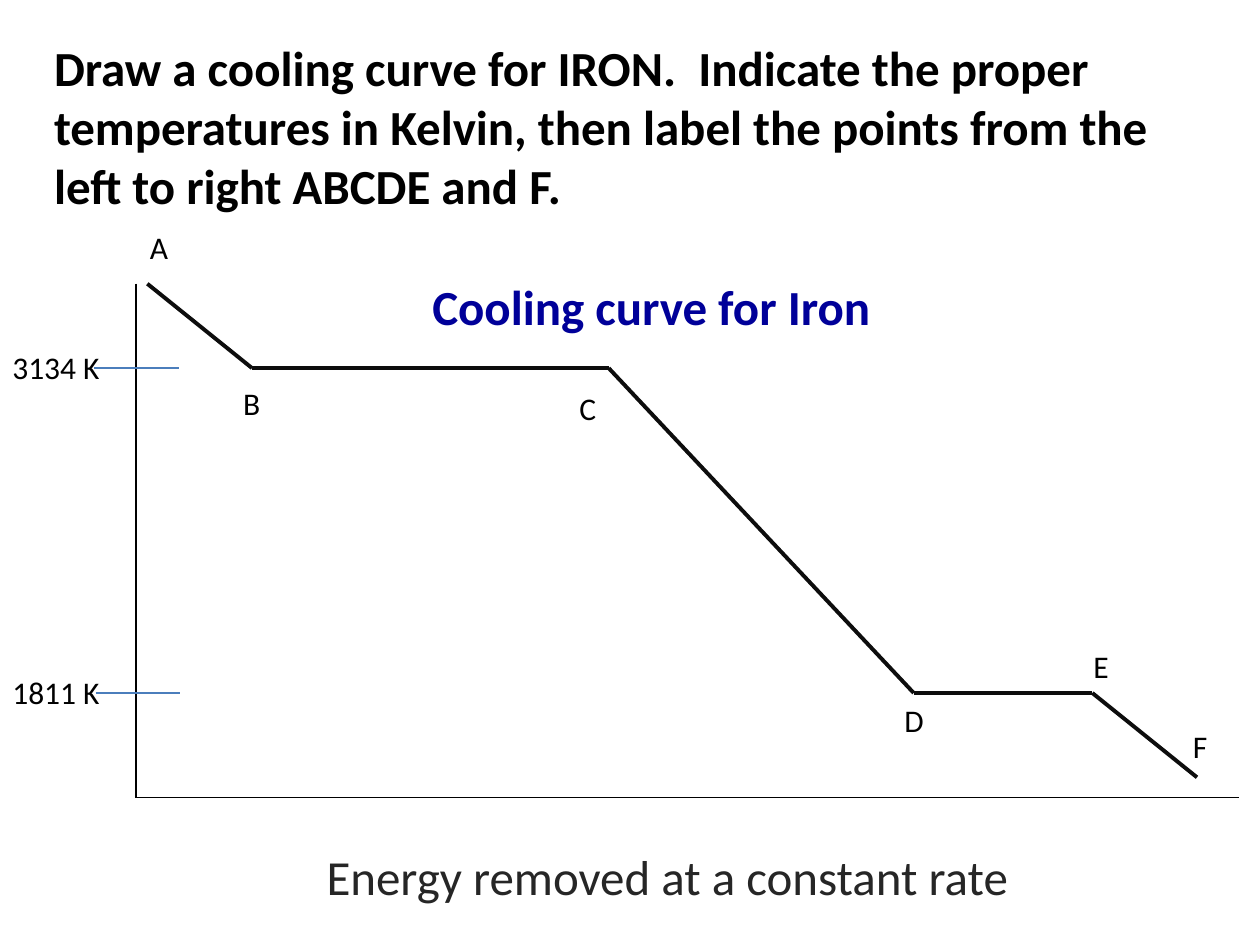
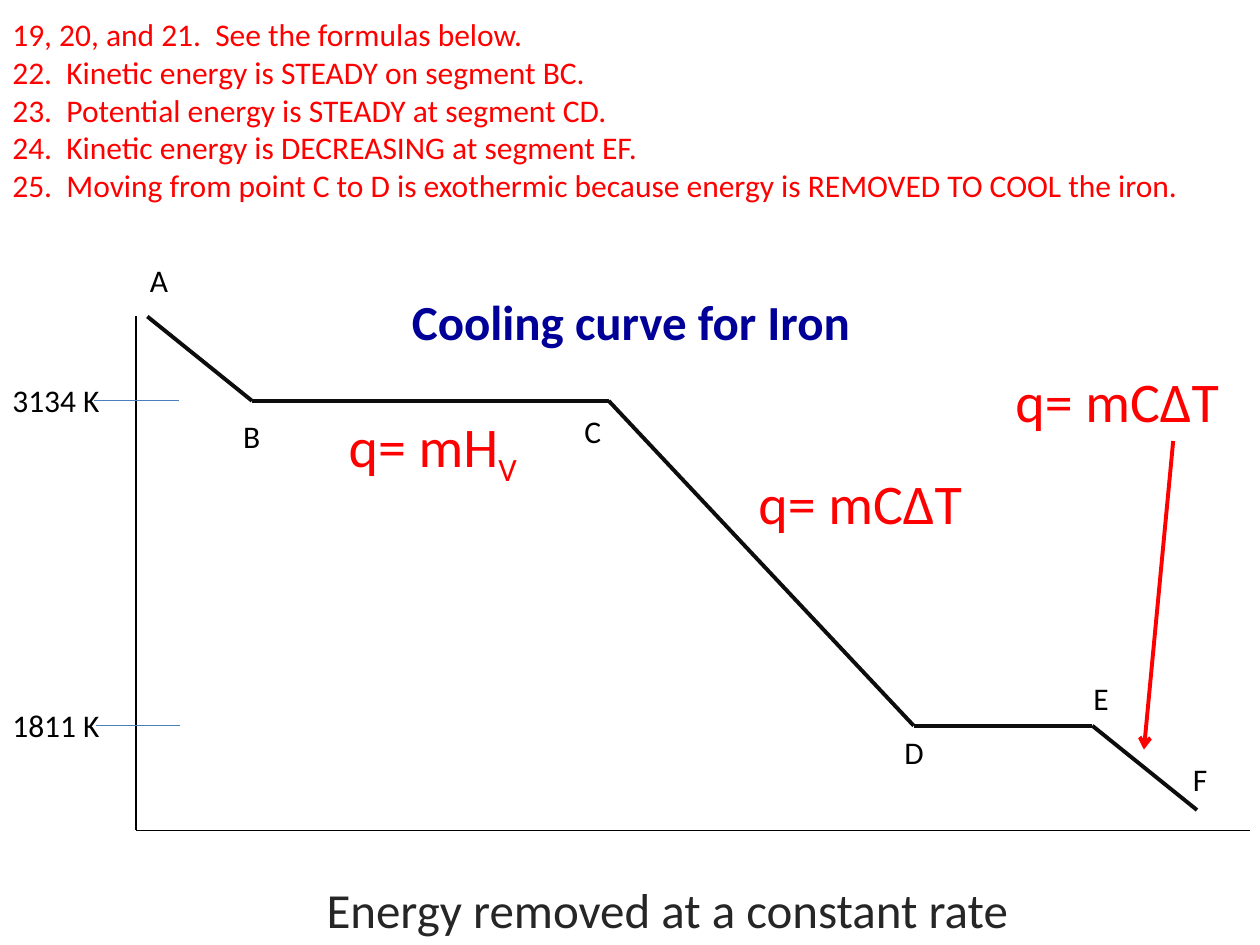
from itertools import pairwise
from lxml import etree
from pptx import Presentation
from pptx.dml.color import RGBColor
from pptx.enum import shapes, text
from pptx.oxml import ns
from pptx.util import Cm, Pt

COLORS = {
    "ink": "000000",
    "curve": "0D0D0D",
    "caption": "262626",
    "tick": "4B7EBC",
    "title": "000099",
    "answer": "FF0000",
}
FONT = "Calibri"
SMALL, LARGE, FORMULA = 18, 28, 32
THIN, THICK = 0.75, 2.25

TITLE = "Cooling curve for Iron"
CAPTION = "Energy removed at a constant rate"
QUESTION = (
    "Draw a cooling curve for IRON.  Indicate the proper temperatures in Kelvin, "
    "then label the points from the left to right ABCDE and F."
)
ANSWERS = [
    "19, 20, and 21.  See the formulas below.",
    "22.  Kinetic energy is STEADY on segment BC.",
    "23.  Potential energy is STEADY at segment CD.",
    "24.  Kinetic energy is DECREASING at segment EF.",
    "25.  Moving from point C to D is exothermic because energy is REMOVED TO COOL the iron.",
]
FORMULAS = [
    (6.78, 8.18, "q= mH", "V"),
    (15.04, 9.32, "q= mCΔT", ""),
    (20.22, 7.26, "q= mCΔT", ""),
]
FORMULA_ARROW = ((23.65, 8.89), (23.06, 15.11))

TOP, BOIL, FREEZE, END, BASE = 5.72, 7.42, 13.97, 15.67, 16.08
AXIS_X = 2.74
CURVE = {
    "A": (2.97, TOP),
    "B": (5.08, BOIL),
    "C": (12.27, BOIL),
    "D": (18.42, FREEZE),
    "E": (22.02, FREEZE),
    "F": (24.13, END),
}
POINT_LABELS = {
    "A": (2.77, 4.48),
    "B": (4.65, 7.62),
    "C": (11.43, 7.72),
    "D": (17.98, 14),
    "E": (21.79, 12.91),
    "F": (23.8, 14.53),
}
TEMPERATURES = [("3134 K", BOIL, 1.9), ("1811 K", FREEZE, 1.93)]
TICK_LENGTH = 1.7
LABEL_RISE = 0.53

SLIDES = [
    {"shift": 0, "axis_end": 24.97, "title_at": (8.46, 5.44), "moved": {}},
    {"shift": 0.66, "axis_end": 25.2, "title_at": (8.05, 5.74), "moved": {"C": (11.53, 7.52)}},
]


def write(box, paragraphs, size, color, bold=False, align=text.PP_ALIGN.LEFT):
    frame = box.text_frame
    frame.word_wrap = True
    frame.auto_size = text.MSO_AUTO_SIZE.SHAPE_TO_FIT_TEXT
    frame.vertical_anchor = text.MSO_ANCHOR.TOP
    for number, words in enumerate(paragraphs):
        paragraph = frame.add_paragraph() if number else frame.paragraphs[0]
        paragraph.alignment = align
        add_run(paragraph, words, size, color, bold)


def add_run(paragraph, words, size, color, bold=False):
    run = paragraph.add_run()
    run.text = words
    run.font.name = FONT
    run.font.size = Pt(size)
    run.font.bold = bold
    run.font.color.rgb = RGBColor.from_string(COLORS[color])
    return run


def add_text(slide, place, paragraphs, size, color, **style):
    box = slide.shapes.add_textbox(*map(Cm, place))
    write(box, paragraphs, size, color, **style)
    return box


def add_line(slide, start, end, color, width, arrow=False):
    line = slide.shapes.add_connector(
        shapes.MSO_CONNECTOR.STRAIGHT, *map(Cm, (*start, *end)))
    line.line.color.rgb = RGBColor.from_string(COLORS[color])
    line.line.width = Pt(width)
    if arrow:
        etree.SubElement(line.line._get_or_add_ln(), ns.qn("a:tailEnd"), type="arrow")
    etree.SubElement(line._element.spPr, ns.qn("a:effectLst"))


def add_title(slide, place):
    title = slide.shapes.title
    title.left, title.top = map(Cm, place)
    title.width, title.height = Cm(12.7), Cm(1.45)
    write(title, [TITLE], LARGE, "title", bold=True)


def draw_cooling_curve(slide, shift, axis_end, title_at, moved):
    add_title(slide, title_at)
    origin = (AXIS_X, BASE + shift)
    add_line(slide, (AXIS_X, TOP + shift), origin, "ink", THIN)
    add_line(slide, (axis_end, BASE + shift), origin, "ink", THIN)
    add_text(slide, (4.24, 16.94 + shift, 18.42, 1.45), [CAPTION], LARGE, "caption",
             align=text.PP_ALIGN.CENTER)
    for _, y, x in TEMPERATURES:
        add_line(slide, (x, y + shift), (x + TICK_LENGTH, y + shift), "tick", THIN)
    for (x1, y1), (x2, y2) in pairwise(CURVE.values()):
        add_line(slide, (x1, y1 + shift), (x2, y2 + shift), "curve", THICK)
    for point, (x, y) in {**POINT_LABELS, **moved}.items():
        add_text(slide, (x, y + shift, 0.84, 1.02), [point], SMALL, "ink")
    for temperature, y, _ in TEMPERATURES:
        add_text(slide, (0, y - LABEL_RISE + shift, 2.74, 1.02), [temperature], SMALL, "ink")


def add_formulas(slide):
    for x, y, formula, subscript in FORMULAS:
        box = add_text(slide, (x, y, 4.65, 1.63), [formula], FORMULA, "answer")
        if subscript:
            run = add_run(box.text_frame.paragraphs[0], subscript, FORMULA, "answer")
            run._r.get_or_add_rPr().set("baseline", "-25000")
    add_line(slide, *FORMULA_ARROW, "answer", THICK, arrow=True)


def main():
    deck = Presentation()
    deck.slide_width, deck.slide_height = Cm(25.4), Cm(19.05)
    title_only = deck.slide_layouts[5]
    question, answer = [deck.slides.add_slide(title_only) for _ in SLIDES]
    for slide, settings in zip((question, answer), SLIDES):
        draw_cooling_curve(slide, **settings)
    add_text(question, (0.84, 0.64, 23.93, 3.84), [QUESTION], LARGE, "ink", bold=True)
    add_text(answer, (0, 0.18, 25.4, 4.11), ANSWERS, SMALL, "answer")
    add_formulas(answer)
    deck.save("out.pptx")


if __name__ == "__main__":
    main()
